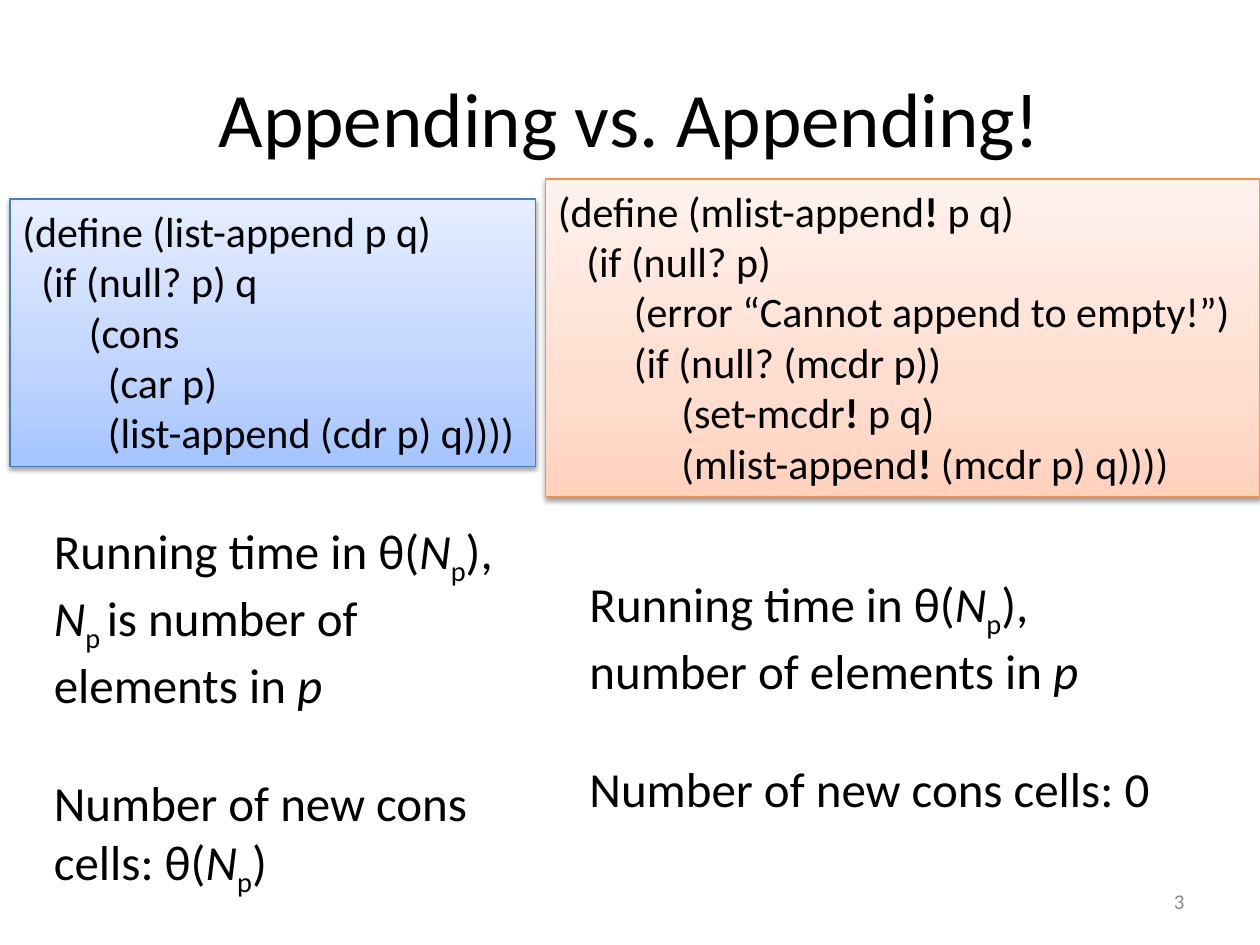
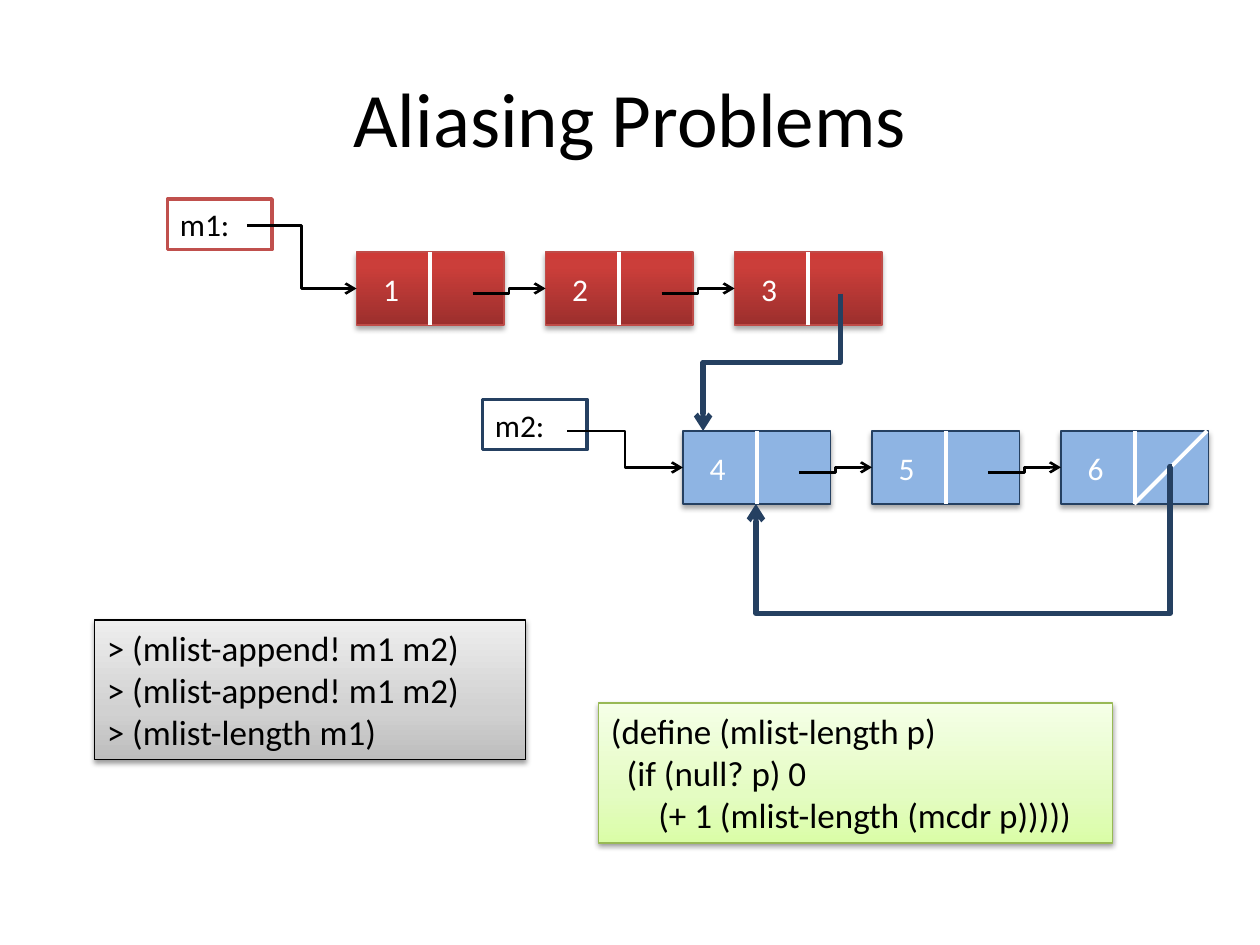
import pptx
import pptx.dml.color
import pptx.enum.shapes
import pptx.enum.text
import pptx.oxml
import pptx.oxml.ns
import pptx.util
from pptx.util import Inches

FONT = "Calibri"
BLACK, WHITE, GRAY = "000000", "FFFFFF", "8C8C8C"
RED, NAVY, SKY = "C0504D", "254061", "8EB4E3"
SPACE_WIDTH = 0.226  # width of a space, as a share of the font size

# Gradient stops from bottom to top, as (percent, colour)
BLUE_FILL = [(0, "A4C4FF"), (35, "BFD4FF"), (100, "E6EEFF")]
ORANGE_FILL = [(0, "FFD2BD"), (35, "FFDED0"), (100, "FFF2ED")]
GRAY_FILL = [(0, "BDBDBD"), (35, "D1D1D1"), (100, "EEEEEE")]
GREEN_FILL = [(0, "DAFDA7"), (35, "E4FCC2"), (100, "F5FFE7")]
RED_FILL = [(0, "9C2F2D"), (80, "CB3E3A"), (100, "CE3B37")]

CELL_WIDTH, CELL_HEIGHT, CELL_PITCH = 1.17, 0.58, 1.5
POINTER_X, POINTER_Y = 0.92, 0.33  # where a cell's pointer starts inside it

ALIGN = pptx.enum.text.PP_ALIGN
ANCHOR = pptx.enum.text.MSO_ANCHOR
CONNECTOR = pptx.enum.shapes.MSO_CONNECTOR
RECTANGLE = pptx.enum.shapes.MSO_SHAPE.RECTANGLE
qn = pptx.oxml.ns.qn


def color(hex_text):
    return pptx.dml.color.RGBColor.from_string(hex_text)


def element(tag, content="", **attributes):
    """Make a DrawingML element from its tag, inner XML and attributes."""
    pairs = "".join(f' {name}="{value}"' for name, value in attributes.items())
    namespace = pptx.oxml.ns.nsdecls("a")
    return pptx.oxml.parse_xml(f"<a:{tag} {namespace}{pairs}>{content}</a:{tag}>")


class Deck:
    def __init__(self):
        self.presentation = pptx.Presentation()
        self.presentation.slide_width = Inches(10)
        self.presentation.slide_height = Inches(7.5)
        self.slide = None

    def add_slide(self, title):
        self.slide = self.presentation.slides.add_slide(self.presentation.slide_layouts[5])
        shape = self.slide.shapes.title
        shape.left, shape.top = Inches(0.5), Inches(0.3)
        shape.width, shape.height = Inches(9), Inches(1.25)
        self.fill_text(shape, [title], 44, align=ALIGN.CENTER, anchor=ANCHOR.MIDDLE)

    def fill_text(self, shape, lines, size, ink=BLACK, align=ALIGN.LEFT,
                  anchor=ANCHOR.TOP, gap=0):
        """Each line is a text, an (indent in spaces, line) pair or a list of (text, style) parts."""
        frame = shape.text_frame
        frame.word_wrap = True
        frame.vertical_anchor = anchor
        for index, line in enumerate(lines):
            paragraph = frame.add_paragraph() if index else frame.paragraphs[0]
            paragraph.alignment = align
            paragraph.space_before = pptx.util.Pt(gap if index else 0)
            indent, line = line if isinstance(line, tuple) else (0, line)
            if indent:
                margin = pptx.util.Pt(indent * SPACE_WIDTH * size)
                paragraph._p.get_or_add_pPr().set("marL", str(margin))
            for text, style in [(line, "")] if isinstance(line, str) else line:
                run = paragraph.add_run()
                run.text = text
                run.font.name = FONT
                run.font.size = pptx.util.Pt(size)
                run.font.color.rgb = color(ink)
                run.font.bold = style == "bold"
                run.font.italic = style == "italic"
                if style == "subscript":
                    run._r.get_or_add_rPr().set("baseline", "-25000")

    def text(self, left, top, width, height, lines, size, **style):
        shape = self.slide.shapes.add_textbox(
            Inches(left), Inches(top), Inches(width), Inches(height))
        self.fill_text(shape, lines, size, **style)

    def box(self, left, top, width, height, fill, line, lines, size,
            line_width=0.75, shadow=None, **style):
        """Rectangle; fill is a colour or gradient stops, shadow is (opacity, distance)."""
        shape = self.slide.shapes.add_shape(
            RECTANGLE, Inches(left), Inches(top), Inches(width), Inches(height))
        if isinstance(fill, str):
            shape.fill.solid()
            shape.fill.fore_color.rgb = color(fill)
        else:
            self.gradient(shape, fill)
        shape.line.color.rgb = color(line)
        shape.line.width = pptx.util.Pt(line_width)
        shape.shadow.inherit = False
        if shadow:
            opacity, distance = shadow
            shade = f'<a:srgbClr val="{BLACK}"><a:alpha val="{opacity * 1000}"/></a:srgbClr>'
            shape._element.spPr.find(qn("a:effectLst")).append(element(
                "outerShdw", shade, blurRad=pptx.util.Pt(3.1), dist=pptx.util.Pt(distance),
                dir=5400000, rotWithShape=0))
        self.fill_text(shape, lines, size, **style)
        return shape

    def gradient(self, shape, stops):
        shape.fill.gradient()
        shape.fill.gradient_angle = 90
        stop_list = shape._element.spPr.find(qn("a:gradFill")).find(qn("a:gsLst"))
        for stop in list(stop_list):
            stop_list.remove(stop)
        for percent, hex_text in stops:
            stop_list.append(element(
                "gs", f'<a:srgbClr val="{hex_text}"/>', pos=percent * 1000))

    def code(self, left, top, width, height, fill, line, lines, size):
        self.box(left, top, width, height, fill, line, lines, size, shadow=(38, 1.6))

    def connector(self, kind, begin, end, ink, width):
        points = [Inches(value) for value in (*begin, *end)]
        connector = self.slide.shapes.add_connector(kind, *points)
        connector.line.color.rgb = color(ink)
        connector.line.width = pptx.util.Pt(width)
        connector._element.spPr.append(element("effectLst"))
        return connector

    def divider(self, begin, end):
        return self.connector(CONNECTOR.STRAIGHT, begin, end, WHITE, 2.25)

    def arrow(self, begin, end, ink=BLACK, width=1.5):
        """Elbow arrow with its head at the end."""
        connector = self.connector(CONNECTOR.ELBOW, begin, end, ink, width)
        connector._element.spPr.find(qn("a:ln")).append(element("tailEnd", type="arrow"))
        return connector

    def label(self, left, top, name, ink):
        self.box(left, top, 0.83, 0.4, WHITE, ink, [name], 18, line_width=2)

    def cell_row(self, left, top, values, fill, line):
        """Linked cons cells, each pointing to the next."""
        for index, value in enumerate(values):
            x = left + index * CELL_PITCH
            cell = self.box(x, top, CELL_WIDTH, CELL_HEIGHT, fill, line, [(2, value)], 18,
                            shadow=(35, 1.8), ink=WHITE, anchor=ANCHOR.MIDDLE)
            middle = x + CELL_WIDTH / 2
            divider = self.divider((middle, top), (middle, top + CELL_HEIGHT))
            divider.begin_connect(cell, 0)
            divider.end_connect(cell, 2)
        for index in range(len(values) - 1):
            x = left + index * CELL_PITCH
            self.arrow((x + POINTER_X, top + POINTER_Y),
                       (x + CELL_PITCH, top + CELL_HEIGHT / 2))


def appending_slide(deck):
    deck.add_slide("Appending vs. Appending!")
    deck.text(7.17, 6.95, 2.33, 0.4, ["3"], 12, ink=GRAY, align=ALIGN.RIGHT,
              anchor=ANCHOR.MIDDLE)
    deck.code(0.08, 1.58, 4.17, 2.12, BLUE_FILL, "4B7EBC", [
        "(define (list-append p q)",
        (2, "(if (null? p) q"),
        (7, "(cons"),
        (9, "(car p)"),
        (9, "(list-append (cdr p) q))))"),
    ], 24)
    bang = ("!", "bold")
    deck.code(4.33, 1.42, 5.67, 2.52, ORANGE_FILL, "F69240", [
        [("(define (mlist-append", ""), bang, (" p q)", "")],
        (3, "(if (null? p)"),
        (8, "(error “Cannot append to empty!”)"),
        (8, "(if (null? (mcdr p))"),
        (13, [("(set-mcdr", ""), bang, (" p q)", "")]),
        (13, [("(mlist-append", ""), bang, (" (mcdr p) q))))", "")]),
    ], 24)
    count = [("N", "italic"), ("p", "subscript")]
    running_time = [("Running time in θ(", ""), *count]
    list_name = ("p", "italic")
    deck.text(0.33, 4.08, 4, 2.93, [
        [*running_time, ("), ", ""), ("N", "italic"), ("p ", "subscript"),
         ("is number of elements in ", ""), list_name],
        [("Number of new cons cells: θ(", ""), *count, (")", "")],
    ], 28, gap=34)
    deck.text(4.58, 4.5, 4.75, 1.99, [
        [*running_time, ("), number of elements in ", ""), list_name],
        "Number of new cons cells: 0",
    ], 28, gap=34)


def aliasing_slide(deck):
    deck.add_slide("Aliasing Problems")
    deck.label(1.33, 1.58, "m1:", RED)
    deck.cell_row(2.83, 2, "123", RED_FILL, "BF4C48")
    deck.arrow((1.96, 1.79), (2.83, 2.29))
    deck.label(3.83, 3.17, "m2:", NAVY)
    deck.cell_row(5.42, 3.42, "456", SKY, NAVY)
    deck.arrow((4.5, 3.42), (5.42, 3.71))
    deck.divider((9, 4), (9.58, 3.42))

    # A quarter turn makes the link from 3 to 4 leave downwards
    first_append = deck.arrow((5.58, 2.33), (6.67, 3.42), NAVY, 3)
    first_append._element.spPr.find(qn("a:xfrm")).set("rot", "5400000")

    # The link from 6 back to 4 runs below the row
    second_append = deck.arrow((9.3, 3.7), (6, 4), NAVY, 3)
    geometry = second_append._element.spPr.find(qn("a:prstGeom"))
    geometry.set("prst", "bentConnector4")
    guides = geometry.find(qn("a:avLst"))
    for name, value in (("adj1", 400), ("adj2", 390000)):
        guides.append(element("gd", name=name, fmla=f"val {value}"))

    deck.code(0.75, 4.92, 3.42, 1.11, GRAY_FILL, BLACK, [
        "> (mlist-append! m1 m2)",
        "> (mlist-append! m1 m2)",
        "> (mlist-length m1)",
    ], 20)
    deck.code(4.75, 5.58, 4.08, 1.11, GREEN_FILL, "98B955", [
        "(define (mlist-length p)",
        (2, "(if (null? p) 0"),
        (6, "(+ 1 (mlist-length (mcdr p)))))"),
    ], 20)


def main():
    deck = Deck()
    appending_slide(deck)
    aliasing_slide(deck)
    deck.presentation.save("out.pptx")


if __name__ == "__main__":
    main()
